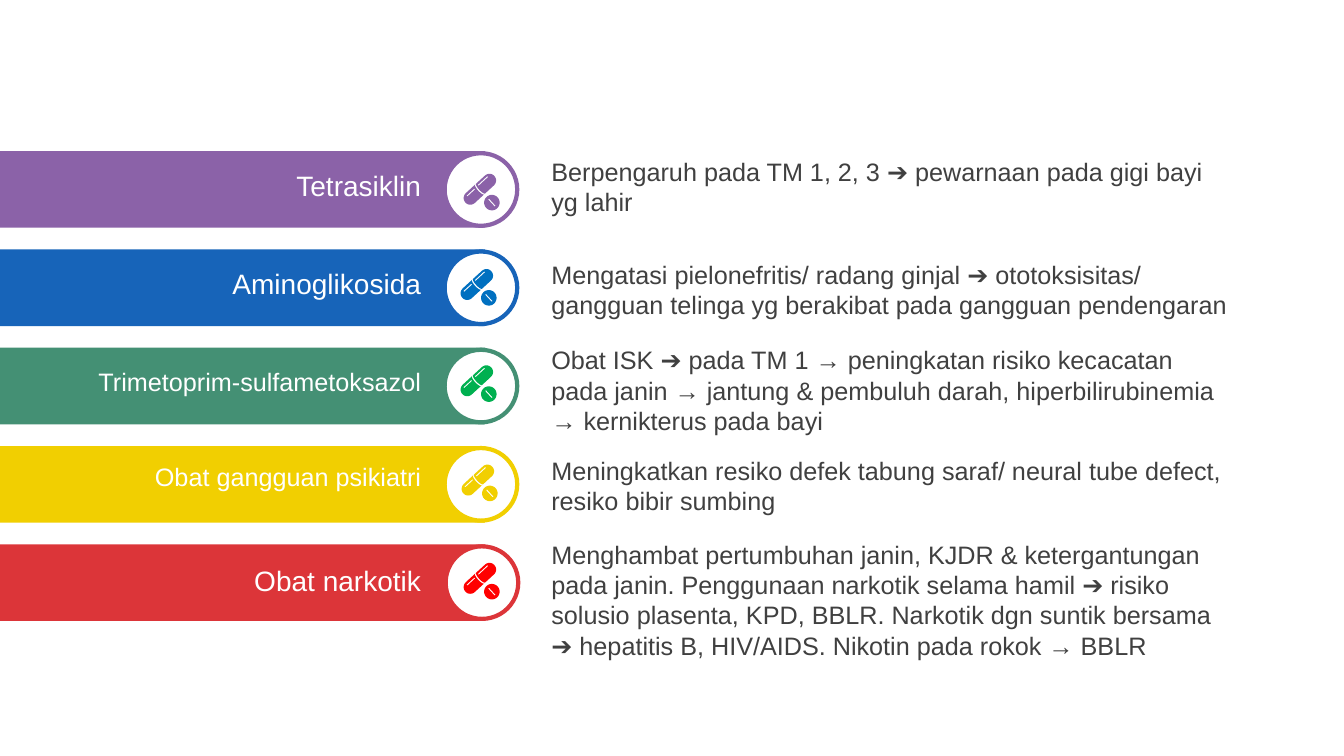
from dataclasses import dataclass
from math import cos, pi, sin

from lxml import etree
from pptx import Presentation
from pptx.dml.color import RGBColor
from pptx.enum.shapes import MSO_SHAPE
from pptx.enum.text import MSO_AUTO_SIZE, PP_ALIGN
from pptx.util import Inches, Pt

FIRST_TOP, PITCH, BAR_W, BAR_H = 1.5, 0.975, 4.81, 0.76
LABEL_RIGHT, EFFECT_LEFT = 4.275, 5.37
CIRCLE, CIRCLE_LEFT = 0.72, 4.41


@dataclass
class Drug:
    """One row; label, effect and pill positions are relative to its bar."""
    name: str
    size: int
    label_dy: float
    colour: str
    pill_colour: str
    pill: tuple
    effect: str
    effect_dy: float
    lines: int
    label_w: float = 3.15
    circle_dx: float = 0


DRUGS = [
    Drug("Tetrasiklin", 20, 0.12, "8B62A8", "8B62A8", (4.63, 0.27),
         "Berpengaruh pada TM 1, 2, 3 ➔ pewarnaan pada gigi bayi yg lahir", 0, 2),
    Drug("Aminoglikosida", 20, 0.12, "1764B9", "0070C0", (4.6, 0.24),
         "Mengatasi pielonefritis/ radang ginjal ➔ ototoksisitas/ gangguan telinga "
         "yg berakibat pada gangguan pendengaran", 0.05, 2),
    Drug("Trimetoprim-sulfametoksazol", 18, 0.13, "449074", "00B050", (4.6, 0.22),
         "Obat ISK ➔ pada TM 1 → peningkatan risiko kecacatan pada janin → jantung & "
         "pembuluh darah, hiperbilirubinemia → kernikterus pada bayi", -0.08, 3, 3.56),
    Drug("Obat gangguan psikiatri", 18, 0.1, "F1CF01", "F1CF01", (4.61, 0.23),
         "Meningkatkan resiko defek tabung saraf/ neural tube defect, "
         "resiko bibir sumbing", 0.04, 2),
    Drug("Obat narkotik", 20, 0.14, "DC3539", "FF0000", (4.63, 0.23),
         "Menghambat pertumbuhan janin, KJDR & ketergantungan pada janin. Penggunaan "
         "narkotik selama hamil ➔ risiko solusio plasenta, KPD, BBLR. Narkotik dgn "
         "suntik bersama ➔ hepatitis B, HIV/AIDS. Nikotin pada rokok → BBLR",
         -0.1, 4, circle_dx=0.01),
]


def rgb(colour):
    """Turn a hex string into a colour."""
    return RGBColor.from_string(colour)


def paint(sp, fill, line=None):
    """Give a shape a flat fill and an optional 3 pt outline."""
    sp.shadow.inherit = False
    sp.fill.solid()
    sp.fill.fore_color.rgb = rgb(fill)
    if line:
        sp.line.color.rgb = rgb(line)
        sp.line.width = Pt(3)
    else:
        sp.line.fill.background()


def add_shape(s, kind, x, y, w, h, fill, line=None):
    """Add a painted preset shape."""
    paint(s.shapes.add_shape(kind, Inches(x), Inches(y), Inches(w), Inches(h)), fill, line)


def add_text(s, x, y, w, h, text, size, colour, align=PP_ALIGN.LEFT):
    """Add a wrapped Arial text box."""
    tf = s.shapes.add_textbox(Inches(x), Inches(y), Inches(w), Inches(h)).text_frame
    tf.word_wrap = True
    tf.auto_size = MSO_AUTO_SIZE.SHAPE_TO_FIT_TEXT
    p = tf.paragraphs[0]
    p.text = text
    p.alignment = align
    p.font.name = "Arial"
    p.font.size = Pt(size)
    p.font.color.rgb = rgb(colour)


def arc(u, v, ru, rv, start, end, steps=16):
    """List points on an elliptical arc between two angles in degrees."""
    angles = [(start + (end - start) * i / steps) * pi / 180 for i in range(steps + 1)]
    return [(u + ru * cos(a), v + rv * sin(a)) for a in angles]


def slit(u1, u2, v1, v2, half=0.006):
    """List the corners of a thin cut in a pill."""
    return [(u1, v1 - half), (u2, v1 - half), (u2, v2 + half), (u1, v2 + half)]


def add_pills(s, x, y, colour):
    """Draw a two-part capsule and a scored tablet in a box at x, y."""
    r, bow, tilt = 0.066, 0.018, 42.6 * pi / 180
    contours = [
        arc(0, 0, r, r, 90, 270) + arc(0.125, 0, -bow, r, -90, 90),
        arc(0.258, 0, r, r, -90, 90) + arc(0.139, 0, -bow, r, 90, -90),
        slit(-0.012, 0.094, -0.037, -0.037),
        slit(0.143, 0.271, -0.04, -0.04),
        arc(0.127, 0.178, 0.077, 0.077, 0, 360, 32),
        slit(0.121, 0.133, 0.13, 0.226, 0),
    ]
    drawn = [[(Inches(x + 0.035 + u * cos(tilt) + v * sin(tilt)),
               Inches(y + 0.195 - u * sin(tilt) + v * cos(tilt))) for u, v in contour]
             for contour in contours]
    fb = s.shapes.build_freeform(*drawn[0][0])
    fb.add_line_segments(drawn[0][1:], close=True)
    for points in drawn[1:]:
        fb.move_to(*points[0])
        fb.add_line_segments(points[1:], close=True)
    paint(fb.convert_to_shape(), colour)


def add_row(s, drug, top):
    """Place one drug's bar, badge, name and effect from the given top."""
    add_shape(s, MSO_SHAPE.RECTANGLE, 0, top, BAR_W, BAR_H, drug.colour)
    add_shape(s, MSO_SHAPE.OVAL, CIRCLE_LEFT + drug.circle_dx, top + (BAR_H - CIRCLE) / 2,
              CIRCLE, CIRCLE, "FFFFFF", drug.colour)
    add_text(s, LABEL_RIGHT - drug.label_w, top + drug.label_dy, drug.label_w,
             0.1 + drug.size * 0.017, drug.name, drug.size, "FFFFFF", PP_ALIGN.RIGHT)
    add_text(s, EFFECT_LEFT, top + drug.effect_dy, 7.01 if drug.name == "Aminoglikosida" else 6.87,
             0.11 + 0.3 * drug.lines, drug.effect, 18, "404040")
    pill_x, pill_dy = drug.pill
    add_pills(s, pill_x, top + pill_dy, drug.pill_colour)


def main():
    """Build the slide and save it."""
    prs = Presentation()
    prs.slide_width, prs.slide_height = Inches(13.33), Inches(7.5)
    s = prs.slides.add_slide(prs.slide_layouts[6])
    for i, drug in enumerate(DRUGS):
        add_row(s, drug, FIRST_TOP + i * PITCH)
    prs.save("out.pptx")


if __name__ == "__main__":
    main()
